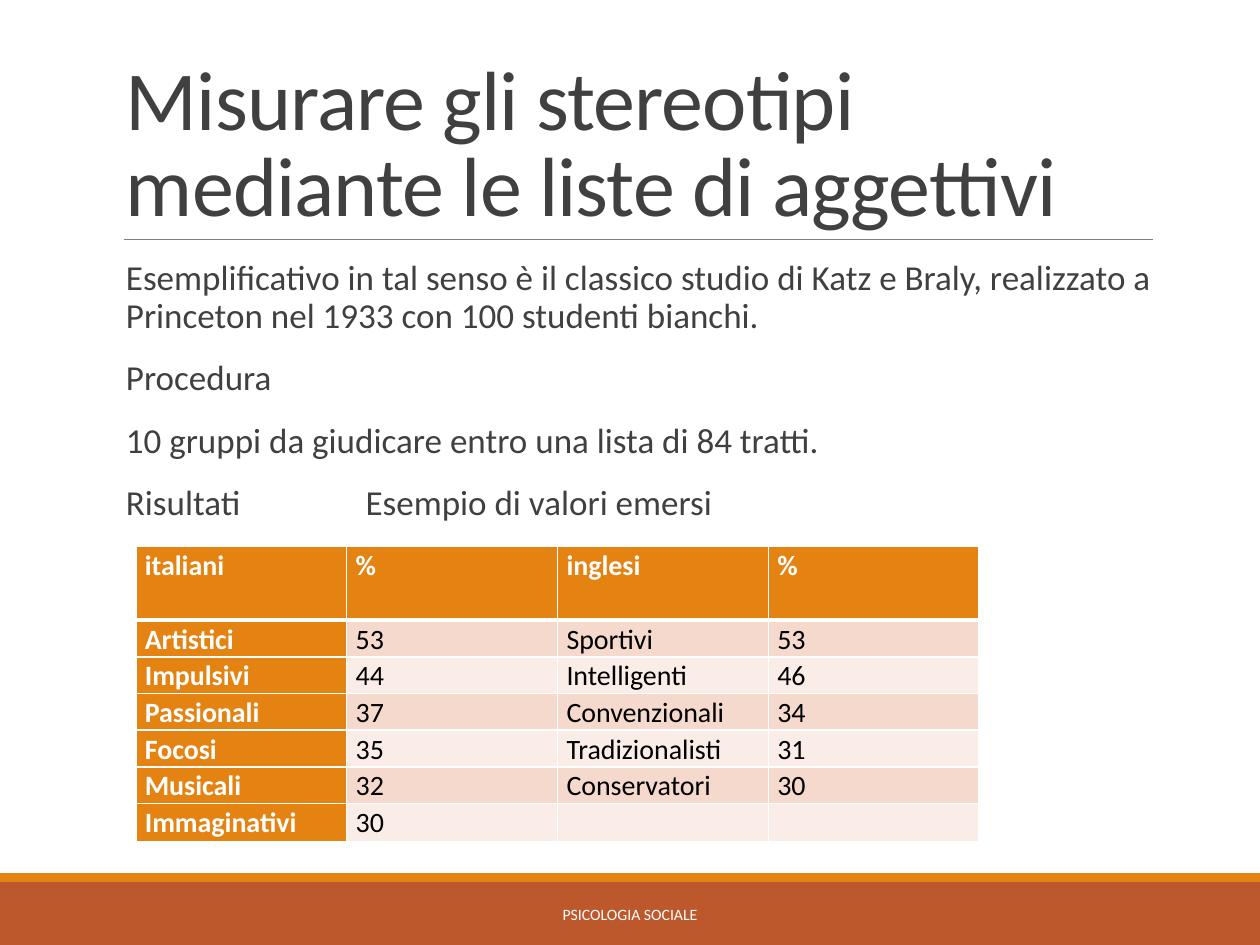
from lxml import etree
from pptx import Presentation
from pptx.dml.color import RGBColor
from pptx.enum import shapes, text
from pptx.oxml.ns import qn
from pptx.util import Cm, Pt

ORANGE, RUST, WHITE, GREY = "E48312", "BD582C", "FFFFFF", "404040"
BANDS = ("F5D9CC", "FAEDE7")

BODY = [
    "Esemplificativo in tal senso è il classico studio di Katz e Braly, "
    "realizzato a Princeton nel 1933 con 100 studenti bianchi.",
    "Procedura",
    "10 gruppi da giudicare entro una lista di 84 tratti.",
    "Risultati \tEsempio di valori emersi",
]
ROWS = [
    ("italiani", "%", "inglesi", "%"),
    ("Artistici", "53", "Sportivi", "53"),
    ("Impulsivi", "44", "Intelligenti", "46"),
    ("Passionali", "37", "Convenzionali", "34"),
    ("Focosi", "35", "Tradizionalisti", "31"),
    ("Musicali", "32", "Conservatori", "30"),
    ("Immaginativi", "30", "", ""),
]


def rgb(value):
    return RGBColor.from_string(value)


def write(p, content, size, color, bold=False, align=None, line=None,
          before=None, after=None, spacing=None):
    """Fill a paragraph with one formatted run."""
    r = p.add_run()
    r.text = content
    r.font.name, r.font.size, r.font.bold = "Calibri", Pt(size), bold
    r.font.color.rgb = rgb(color)
    if spacing is not None:
        r.font._element.set("spc", str(int(spacing * 100)))
    p.alignment, p.line_spacing = align, line
    if before is not None:
        p.space_before = Pt(before)
    if after is not None:
        p.space_after = Pt(after)


def add_text(slide, x, y, w, h, items, anchor=text.MSO_ANCHOR.TOP,
             right=0.25, **fmt):
    tf = slide.shapes.add_textbox(Cm(x), Cm(y), Cm(w), Cm(h)).text_frame
    tf.word_wrap, tf.vertical_anchor = True, anchor
    tf.margin_right = Cm(right)
    for i, item in enumerate(items):
        p = tf.add_paragraph() if i else tf.paragraphs[0]
        write(p, item, **fmt)
    return tf


def add_tab(p, pos):
    tabs = etree.SubElement(p._p.get_or_add_pPr(), qn("a:tabLst"))
    etree.SubElement(tabs, qn("a:tab"), pos=str(Cm(pos)), algn="l")


def add_band(slide, y, h, color):
    sp = slide.shapes.add_shape(shapes.MSO_SHAPE.RECTANGLE,
                                0, Cm(y), Cm(25.4), Cm(h))
    sp.shadow.inherit = False
    sp.fill.solid()
    sp.fill.fore_color.rgb = rgb(color)
    sp.line.fill.background()


def add_rule(slide, x1, x2, y, color):
    line = slide.shapes.add_connector(shapes.MSO_CONNECTOR.STRAIGHT,
                                      Cm(x1), Cm(y), Cm(x2), Cm(y))
    line.line.color.rgb = rgb(color)
    line.line.width = Pt(0.5)
    etree.SubElement(line._element.spPr, qn("a:effectLst"))


def add_borders(cell, **widths):
    tc_pr = cell._tc.get_or_add_tcPr()
    for side in ("L", "R", "T", "B"):
        ln = etree.SubElement(tc_pr, qn(f"a:ln{side}"),
                              w=str(Pt(widths.get(side, 1))))
        fill = etree.SubElement(ln, qn("a:solidFill"))
        etree.SubElement(fill, qn("a:srgbClr"), val=WHITE)


def add_results(slide, x, y, col_w, header_h, row_h):
    n_rows, n_cols = len(ROWS), len(ROWS[0])
    table = slide.shapes.add_table(
        n_rows, n_cols, Cm(x), Cm(y), Cm(col_w * n_cols),
        Cm(header_h + row_h * (n_rows - 1))).table
    table.first_col = True
    for col in table.columns:
        col.width = Cm(col_w)
    for i, values in enumerate(ROWS):
        table.rows[i].height = Cm(row_h if i else header_h)
        for j, value in enumerate(values):
            cell = table.cell(i, j)
            heading = i == 0 or j == 0
            # Thick rule between the header and the first data row
            add_borders(cell, **{0: {"B": 3}, 1: {"T": 3}}.get(i, {}))
            cell.fill.solid()
            cell.fill.fore_color.rgb = rgb(ORANGE if heading else BANDS[(i - 1) % 2])
            cell.margin_left = cell.margin_right = Cm(0.18)
            cell.margin_top = cell.margin_bottom = 0
            write(cell.text_frame.paragraphs[0], value, size=16, bold=heading,
                  color=WHITE if heading else "000000", line=1.07)


def main():
    prs = Presentation()
    prs.slide_width, prs.slide_height = Cm(25.4), Cm(19.05)
    slide = prs.slides.add_slide(prs.slide_layouts[6])

    # Footer bands and title rule
    add_band(slide, 17.78, 1.27, RUST)
    add_band(slide, 17.6, 0.18, ORANGE)
    add_rule(slide, 2.49, 23.24, 4.83, "808080")

    # Title and body
    add_text(slide, 2.29, 0.79, 20.95, 4.04,
             ["Misurare gli stereotipi mediante le liste di aggettivi"],
             anchor=text.MSO_ANCHOR.BOTTOM, size=48, color=GREY,
             line=0.85, spacing=-0.5)
    tf = add_text(slide, 2.29, 5.13, 20.95, 11.18, BODY, right=0, size=20,
                  color=GREY, line=0.9, before=12, after=2)
    add_tab(tf.paragraphs[-1], 4.83)

    # Results table
    add_results(slide, 2.74, 11.02, 4.25, 1.48, 0.74)

    # Footer text
    add_text(slide, 7.67, 17.93, 10.06, 1.02, ["PSICOLOGIA SOCIALE"],
             anchor=text.MSO_ANCHOR.MIDDLE, size=9, color=WHITE,
             align=text.PP_ALIGN.CENTER)

    prs.save("out.pptx")


if __name__ == "__main__":
    main()
